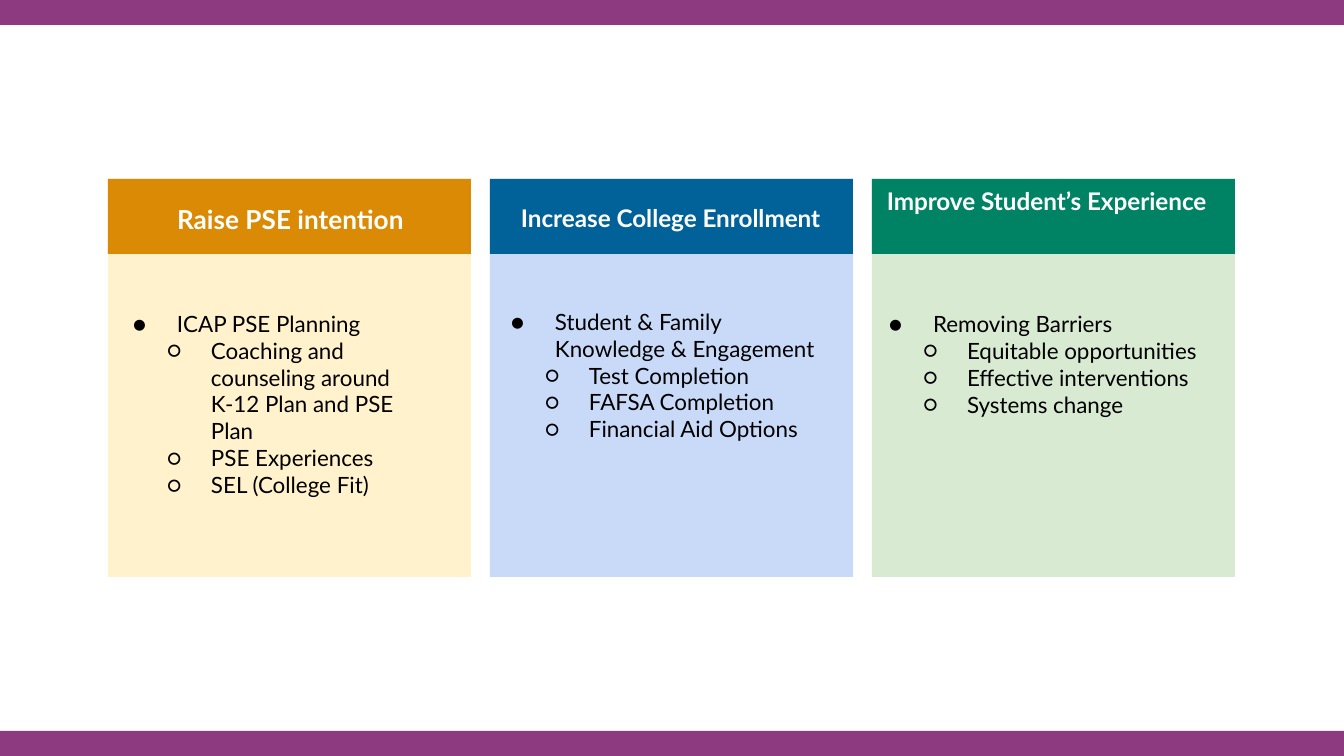
"""Build a slide with three coloured columns of post-secondary goals."""
from dataclasses import dataclass

from lxml.etree import SubElement
from pptx import Presentation
from pptx.dml.color import RGBColor
from pptx.enum.shapes import MSO_SHAPE as Preset
from pptx.enum.text import MSO_ANCHOR as Anchor, PP_ALIGN as Align
from pptx.oxml.ns import qn
from pptx.slide import Slide
from pptx.text.text import TextFrame
from pptx.util import Pt

SCALE = 914400 / 134.4
WIDTH, HEIGHT = 1344, 756
BAR_HEIGHT = 25
COLUMN_LEFT, COLUMN_PITCH, COLUMN_WIDTH = 108, 382, 363
COLUMN_TOP, COLUMN_HEIGHT, HEADER_HEIGHT = 179, 398, 75
INSET, HANGING = 13, 44
FONT = "Lato"
PURPLE, WHITE, BLACK = "8E3A80", "FFFFFF", "000000"


@dataclass(frozen=True)
class Box:
    """A rectangle in px."""
    left: int
    top: int
    width: int
    height: int


@dataclass(frozen=True)
class Goal:
    """One column: its heading, main point and sub-points."""
    heading: str
    heading_size: int
    heading_box: Box
    point: str
    subpoints: tuple[str, ...]
    list_box: Box
    dark: str
    light: str


GOALS = (
    Goal("Raise PSE intention", 14, Box(116, 190, 349, 59),
         "ICAP PSE Planning",
         ("Coaching and counseling around K-12 Plan and PSE Plan",
          "PSE Experiences", "SEL (College Fit)"),
         Box(97, 297, 356, 276), "DB8A06", "FFF2CC"),
    Goal("Increase College Enrollment", 13, Box(496, 190, 349, 56),
         "Student & Family Knowledge & Engagement",
         ("Test Completion", "FAFSA Completion", "Financial Aid Options"),
         Box(475, 295, 356, 222), "006298", "C9DAF8"),
    Goal("Improve Student’s Experience", 13, Box(872, 173, 349, 90),
         "Removing Barriers",
         ("Equitable opportunities", "Effective interventions", "Systems change"),
         Box(853, 297, 384, 195), "008264", "D9EAD3"),
)


def px(length: int) -> int:
    """Turn px into EMU."""
    return round(length * SCALE)


def place(box: Box) -> tuple[int, ...]:
    """Give a box's position and size in EMU."""
    return px(box.left), px(box.top), px(box.width), px(box.height)


def color(code: str) -> RGBColor:
    """Turn a hex string into a colour."""
    return RGBColor.from_string(code)


def add_panel(slide: Slide, box: Box, fill: str) -> None:
    """Draw a plain filled rectangle."""
    panel = slide.shapes.add_shape(Preset.RECTANGLE, *place(box))
    panel.shadow.inherit = False
    panel.fill.solid()
    panel.fill.fore_color.rgb = color(fill)
    panel.line.fill.background()


def add_text(slide: Slide, box: Box, lines: tuple[str, ...], size: int,
             ink: str, bold: bool = False) -> TextFrame:
    """Add a wrapped text box with one paragraph per line."""
    frame = slide.shapes.add_textbox(*place(box)).text_frame
    frame.word_wrap = True
    frame.vertical_anchor = Anchor.TOP
    frame.margin_left = frame.margin_right = px(INSET)
    frame.margin_top = frame.margin_bottom = px(INSET)
    frame.text = "\n".join(lines)
    for paragraph in frame.paragraphs:
        for run in paragraph.runs:
            run.font.name = FONT
            run.font.size = Pt(size)
            run.font.bold = bold
            run.font.color.rgb = color(ink)
    return frame


def add_list(slide: Slide, goal: Goal) -> None:
    """Add a goal's main point and its indented sub-points."""
    frame = add_text(slide, goal.list_box, (goal.point, *goal.subpoints), 12, BLACK)
    for index, paragraph in enumerate(frame.paragraphs):
        level, margin, bullet = (1, 101, "○") if index else (0, 67, "●")
        paragraph.level = level
        properties = paragraph._p.get_or_add_pPr()
        properties.set("marL", str(px(margin)))
        properties.set("indent", str(-px(HANGING)))
        bullet_color = SubElement(properties, qn("a:buClr"))
        SubElement(bullet_color, qn("a:srgbClr"), val=BLACK)
        SubElement(properties, qn("a:buFont"), typeface=FONT)
        SubElement(properties, qn("a:buChar"), char=bullet)


def add_goal(slide: Slide, index: int, goal: Goal) -> None:
    """Draw one column with its heading and list."""
    left = COLUMN_LEFT + index * COLUMN_PITCH
    add_panel(slide, Box(left, COLUMN_TOP, COLUMN_WIDTH, COLUMN_HEIGHT), goal.light)
    add_panel(slide, Box(left, COLUMN_TOP, COLUMN_WIDTH, HEADER_HEIGHT), goal.dark)
    heading = add_text(slide, goal.heading_box, (goal.heading,),
                       goal.heading_size, WHITE, bold=True)
    heading.paragraphs[0].alignment = Align.CENTER
    add_list(slide, goal)


def main() -> None:
    """Build and save the presentation."""
    deck = Presentation()
    deck.slide_width, deck.slide_height = px(WIDTH), px(HEIGHT)
    slide = deck.slides.add_slide(deck.slide_layouts[6])
    for top in (0, HEIGHT - BAR_HEIGHT):
        add_panel(slide, Box(0, top, WIDTH, BAR_HEIGHT), PURPLE)
    for index, goal in enumerate(GOALS):
        add_goal(slide, index, goal)
    deck.save("out.pptx")


if __name__ == "__main__":
    main()
